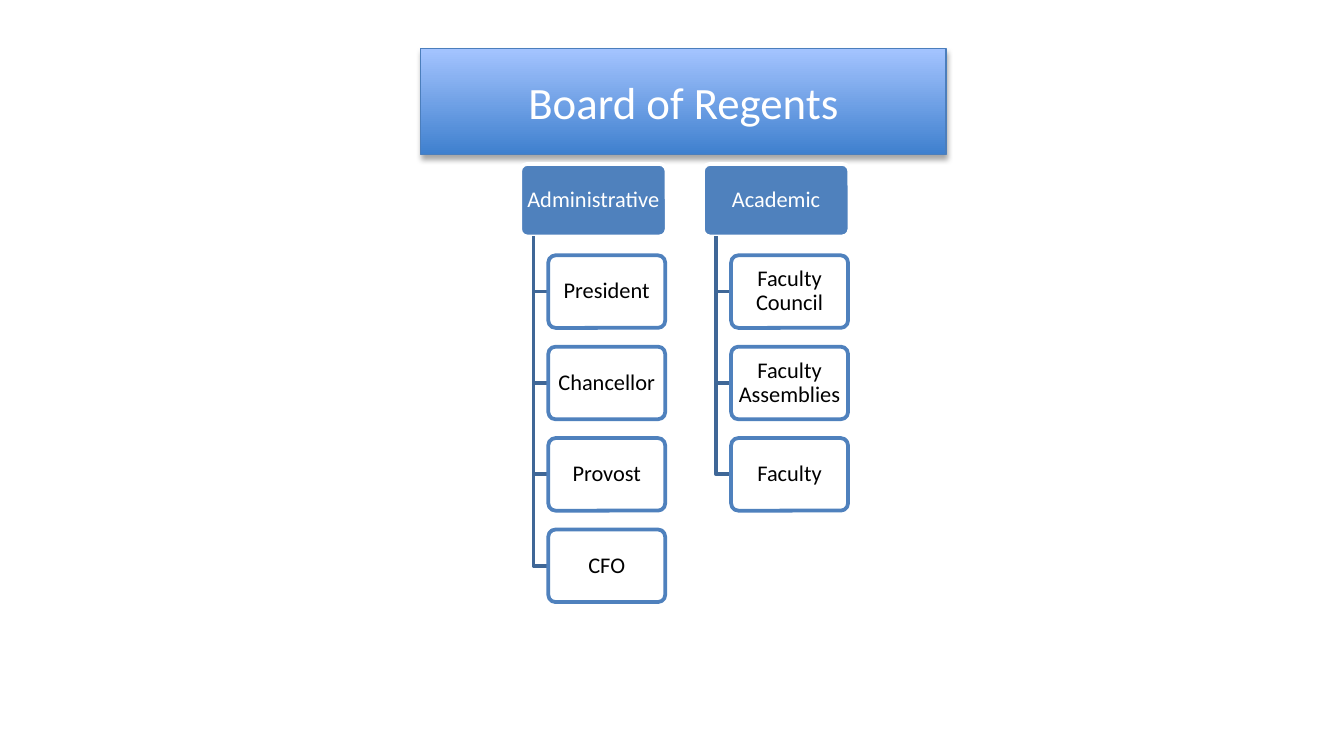
from lxml.etree import SubElement
from pptx import Presentation
from pptx.dml.color import RGBColor
from pptx.enum.shapes import MSO_SHAPE as Shape
from pptx.enum.text import MSO_ANCHOR as Anchor, MSO_AUTO_SIZE as AutoSize, PP_ALIGN as Align
from pptx.oxml.ns import qn
from pptx.util import Inches, Pt

BLUE, WHITE, BLACK, BRANCH_BLUE = "4F81BD", "FFFFFF", "000000", "3F6797"
NODE_HEIGHT, ROW_PITCH = 0.54, 0.68
BRANCHES = {
    "Administrative": ["President", "Chancellor", "Provost", "CFO"],
    "Academic": ["Faculty Council", "Faculty Assemblies", "Faculty"],
}


def rgb(color):
    return RGBColor.from_string(color)


def set_line(shape, color, width):
    shape.line.color.rgb = rgb(color)
    shape.line.width = Pt(width)


def set_text(shape, text, size, color):
    frame = shape.text_frame
    frame.text = text
    frame.word_wrap = True
    frame.auto_size = AutoSize.NONE
    frame.vertical_anchor = Anchor.MIDDLE
    paragraph = frame.paragraphs[0]
    paragraph.alignment = Align.CENTER
    paragraph.font.name = "Calibri"
    paragraph.font.size = Pt(size)
    paragraph.font.color.rgb = rgb(color)
    return frame


def add_board(slide, left, top, width, height):
    board = slide.shapes.title
    board.left, board.top = Inches(left), Inches(top)
    board.width, board.height = Inches(width), Inches(height)
    board.fill.gradient()
    board.fill.gradient_angle = 90
    for stop, color in zip(board.fill.gradient_stops, ["3F80CE", "A4C4FF"]):
        stop.color.rgb = rgb(color)
    set_line(board, "4B7EBC", 0.75)
    set_text(board, "Board of Regents", 24, WHITE)

    effects = SubElement(board._element.spPr, qn("a:effectLst"))
    shadow = SubElement(effects, qn("a:outerShdw"), blurRad=str(Pt(3.1)),
                        dist=str(Pt(1.8)), dir="5400000", rotWithShape="0")
    shade = SubElement(shadow, qn("a:srgbClr"), val=BLACK)
    SubElement(shade, qn("a:alpha"), val="35000")


def add_node(slide, text, left, top, width, fill, line, text_color):
    node = slide.shapes.add_shape(Shape.ROUNDED_RECTANGLE, Inches(left), Inches(top),
                                  Inches(width), Inches(NODE_HEIGHT))
    node.adjustments[0] = 0.1
    node.shadow.inherit = False
    node.fill.solid()
    node.fill.fore_color.rgb = rgb(fill)
    set_line(node, line, 2)
    frame = set_text(node, text, 12, text_color)
    frame.margin_left = frame.margin_right = Inches(0.03)
    frame.margin_top = frame.margin_bottom = Inches(0.02)
    frame.paragraphs[0].line_spacing = 0.9
    return node


def add_elbow(slide, left, top, right, bottom):
    builder = slide.shapes.build_freeform(Inches(left), Inches(top))
    builder.add_line_segments([(Inches(left), Inches(bottom)),
                               (Inches(right), Inches(bottom))], close=False)
    elbow = builder.convert_to_shape()
    elbow.fill.background()
    elbow.shadow.inherit = False
    set_line(elbow, BRANCH_BLUE, 2)


def add_branch(slide, heading, members, left, top, width):
    add_node(slide, heading, left, top, width, BLUE, WHITE, WHITE)
    member_left = left + 0.21
    for row, member in enumerate(members, 1):
        member_top = top + row * ROW_PITCH
        add_elbow(slide, left + 0.1, top + NODE_HEIGHT,
                  member_left, member_top + NODE_HEIGHT / 2)
        node = add_node(slide, member, member_left, member_top, 0.87, WHITE, BLUE, BLACK)
        fill_color = node._element.spPr.find(qn("a:solidFill"))[0]
        SubElement(fill_color, qn("a:alpha"), val="90000")


def main():
    deck = Presentation()
    deck.slide_width = Inches(10)
    deck.slide_height = deck.slide_width * 9 // 16
    slide = deck.slides.add_slide(deck.slide_layouts[5])
    add_board(slide, 3.13, 0.36, 3.91, 0.79)
    for column, (heading, members) in enumerate(BRANCHES.items()):
        add_branch(slide, heading, members, 3.87 + column * 1.36, 1.22, 1.09)
    deck.save("out.pptx")


if __name__ == "__main__":
    main()
